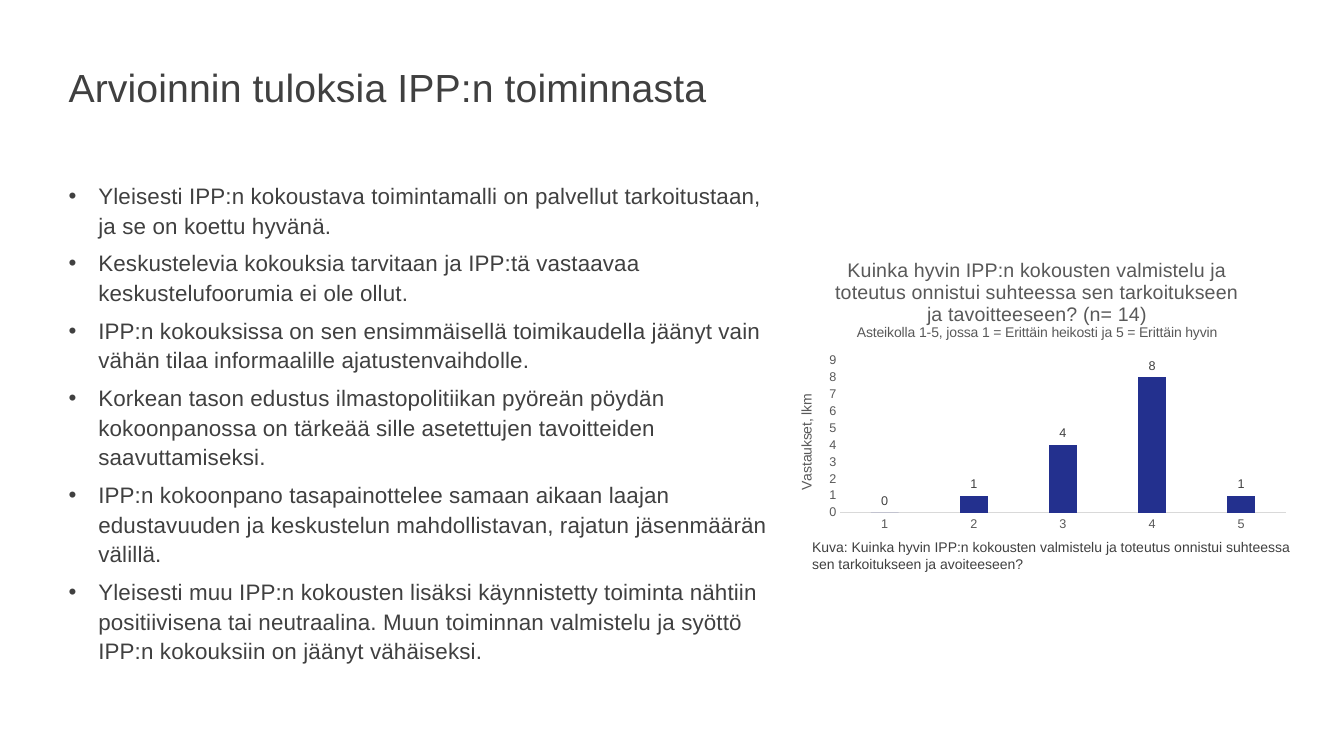
from lxml import etree
from pptx import Presentation
from pptx.chart.data import CategoryChartData
from pptx.dml.color import RGBColor
from pptx.enum import chart as ch, text as tx
from pptx.oxml import parse_xml
from pptx.oxml.ns import nsdecls, qn
from pptx.util import Pt

INK = RGBColor(0x40, 0x40, 0x40)
GREY = RGBColor(0x59, 0x59, 0x59)
RULE = RGBColor(0xD9, 0xD9, 0xD9)
NAVY = RGBColor(0x23, 0x30, 0x8E)
FACE = "Arial"

POINTS = [
    "Yleisesti IPP:n kokoustava toimintamalli on palvellut tarkoitustaan, ja se on koettu hyvänä.",
    "Keskustelevia kokouksia tarvitaan ja IPP:tä vastaavaa keskustelufoorumia ei ole ollut.",
    "IPP:n kokouksissa on sen ensimmäisellä toimikaudella jäänyt vain vähän tilaa "
    "informaalille ajatustenvaihdolle.",
    "Korkean tason edustus ilmastopolitiikan pyöreän pöydän kokoonpanossa on tärkeää "
    "sille asetettujen tavoitteiden saavuttamiseksi.",
    "IPP:n kokoonpano tasapainottelee samaan aikaan laajan edustavuuden ja keskustelun "
    "mahdollistavan, rajatun jäsenmäärän välillä.",
    "Yleisesti muu IPP:n kokousten lisäksi käynnistetty toiminta nähtiin positiivisena tai "
    "neutraalina. Muun toiminnan valmistelu ja syöttö IPP:n kokouksiin on jäänyt vähäiseksi.",
]


def style(font, size, color):
    font.name, font.size, font.bold = FACE, Pt(size), False
    font.color.rgb = color


def write(slide, box, lines, size, inset=True, track=None):
    """Text box with one paragraph per line; returns its frame."""
    frame = slide.shapes.add_textbox(*map(Pt, box)).text_frame
    frame.word_wrap = True
    if not inset:
        frame.margin_left = frame.margin_right = 0
        frame.margin_top = frame.margin_bottom = 0
    frame.text = "\n".join(lines)
    for para in frame.paragraphs:
        for run in para.runs:
            style(run.font, size, INK)
            if track:
                run.font._element.set("spc", str(track))
    return frame


def title(slide, box):
    frame = write(slide, box, ["Arvioinnin tuloksia IPP:n toiminnasta"], 28, False, 10)
    frame.paragraphs[0].line_spacing = 0.9


def bullets(slide, box):
    frame = write(slide, box, POINTS, 16, False, 10)
    for para in frame.paragraphs:
        props = para._p.get_or_add_pPr()
        props.set("marL", str(Pt(21.3)))
        props.set("indent", str(-Pt(21.3)))
        etree.SubElement(props, qn("a:buFont")).set("typeface", FACE)
        etree.SubElement(props, qn("a:buChar")).set("char", "•")
        para.line_spacing = 1.1
        para.space_after = Pt(6)


def place(plot, left, top, width, height):
    """Fix the inner plot area as fractions of the chart."""
    for old in plot.findall(qn("c:layout")):
        plot.remove(old)
    sizes = zip("xywh", (left, top, width, height))
    marks = "".join(f'<c:{key} val="{val}"/>' for key, val in sizes)
    plot.insert(0, parse_xml(
        f'<c:layout {nsdecls("c")}><c:manualLayout><c:layoutTarget val="inner"/>'
        f'<c:xMode val="edge"/><c:yMode val="edge"/>{marks}'
        '</c:manualLayout></c:layout>'))


def head(frame, lines):
    """Chart or axis title from (words, size) pairs."""
    frame.text = "\n".join(words for words, size in lines)
    for para, (words, size) in zip(frame.paragraphs, lines):
        style(para.font, size, GREY)
        style(para.runs[0].font, size, GREY)


def graph(slide, box):
    data = CategoryChartData()
    data.categories = ["1", "2", "3", "4", "5"]
    data.add_series("Vastaukset", (0, 1, 4, 8, 1))
    chart = slide.shapes.add_chart(
        ch.XL_CHART_TYPE.COLUMN_CLUSTERED, *map(Pt, box), data).chart
    style(chart.font, 10, RGBColor(0, 0, 0))
    chart.has_legend = False
    head(chart.chart_title.text_frame, [
        ("Kuinka hyvin IPP:n kokousten valmistelu ja toteutus onnistui suhteessa "
         "sen tarkoitukseen ja tavoitteeseen? (n= 14)", 14),
        ("Asteikolla 1-5, jossa 1 = Erittäin heikosti ja 5 = Erittäin hyvin", 10)])
    chart.chart_title.include_in_layout = False

    # Columns and their labels
    plot = chart.plots[0]
    plot.gap_width, plot.overlap, plot.vary_by_categories = 219, -27, False
    fill = plot.series[0].format.fill
    fill.solid()
    fill.fore_color.rgb = NAVY
    plot.has_data_labels = True
    labels = plot.data_labels
    labels.show_value = True
    labels.position = ch.XL_LABEL_POSITION.OUTSIDE_END
    style(labels.font, 9, INK)

    # Axes
    cat, val = chart.category_axis, chart.value_axis
    for axis in (cat, val):
        axis.has_major_gridlines = False
        axis.major_tick_mark = axis.minor_tick_mark = ch.XL_TICK_MARK.NONE
        style(axis.tick_labels.font, 9, GREY)
    cat.format.line.color.rgb = RULE
    cat.format.line.width = Pt(0.75)
    val.format.line.fill.background()
    val.minimum_scale, val.maximum_scale, val.major_unit = 0, 9, 1
    head(val.axis_title.text_frame, [("Vastaukset, lkm", 10)])
    place(chart._chartSpace.chart.plotArea, 0.12, 0.4, 0.86, 0.52)


def caption(slide, box):
    frame = write(slide, box, [
        "Kuva: Kuinka hyvin IPP:n kokousten valmistelu ja toteutus onnistui "
        "suhteessa sen tarkoitukseen ja avoiteeseen?"], 10)
    frame.auto_size = tx.MSO_AUTO_SIZE.SHAPE_TO_FIT_TEXT


def main():
    deck = Presentation()
    deck.slide_width, deck.slide_height = Pt(960), Pt(540)
    slide = deck.slides.add_slide(deck.slide_layouts[6])
    title(slide, (49, 49, 708.5, 62.6))
    bullets(slide, (49, 128.2, 507, 345.6))
    graph(slide, (555.8, 173.5, 370, 209.5))
    caption(slide, (573, 381, 370, 31.7))
    deck.save("out.pptx")


if __name__ == "__main__":
    main()
